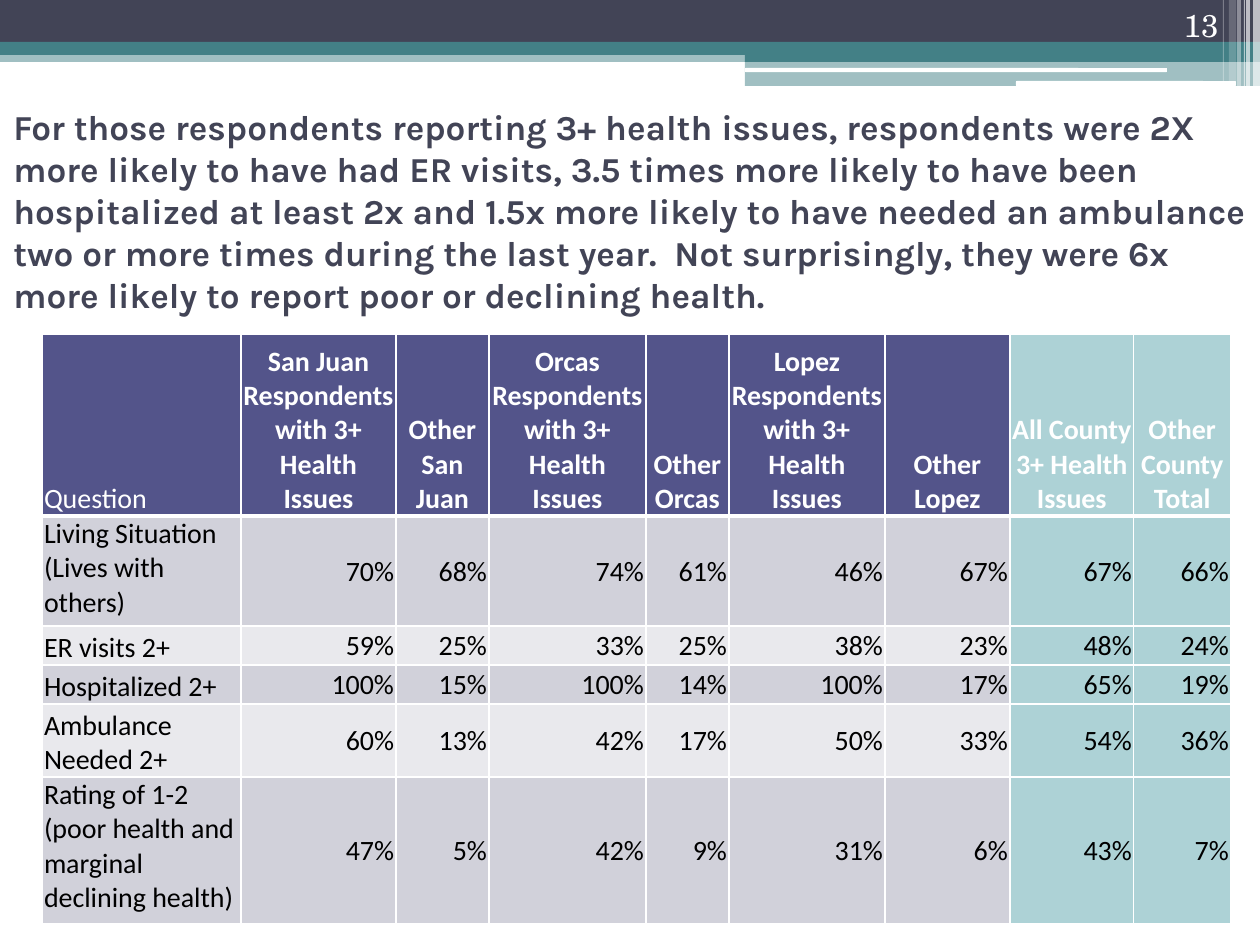
from dataclasses import dataclass

import lxml.etree
import pptx
import pptx.dml.color
import pptx.enum.shapes
import pptx.enum.text
import pptx.oxml.ns
import pptx.util

ALIGN = pptx.enum.text.PP_ALIGN
ANCHOR = pptx.enum.text.MSO_ANCHOR
SHAPE = pptx.enum.shapes.MSO_SHAPE
qn = pptx.oxml.ns.qn


@dataclass(frozen=True)
class Theme:
    white: str = "FFFFFF"
    black: str = "000000"
    navy: str = "424456"
    teal: str = "438086"
    header: str = "53548A"
    county: str = "ADD2D6"
    bands: tuple = ("D1D1DA", "E9E9ED")
    title_font: str = "Karla"
    table_font: str = "Calibri"
    number_font: str = "TeX Gyre Schola"
    title_size: int = 20
    table_size: int = 16
    number_size: int = 18
    thin_line: int = 1
    thick_line: int = 3


@dataclass(frozen=True)
class Bar:
    x: int
    y: int
    w: int
    h: int
    color: str
    opacity: int = 100
    rounded: bool = False


@dataclass(frozen=True)
class Style:
    font: str
    size: int
    color: str
    bold: bool = False
    align: ALIGN = ALIGN.LEFT
    anchor: ANCHOR = ANCHOR.MIDDLE


THEME = Theme()


def px(n: int) -> int:
    """Turn pixels (126 to the inch) into EMU."""
    return round(n * 914400 / 126)


def rgb(color: str) -> pptx.dml.color.RGBColor:
    return pptx.dml.color.RGBColor.from_string(color)


def add_bar(s, bar: Bar) -> None:
    kind = SHAPE.ROUNDED_RECTANGLE if bar.rounded else SHAPE.RECTANGLE
    sp = s.shapes.add_shape(kind, px(bar.x), px(bar.y), px(bar.w), px(bar.h))
    sp.shadow.inherit = False
    sp.line.fill.background()
    sp.fill.solid()
    sp.fill.fore_color.rgb = rgb(bar.color)
    if bar.opacity < 100:
        clr = sp.fill._xPr.find(".//" + qn("a:srgbClr"))
        lxml.etree.SubElement(clr, qn("a:alpha"), val=str(bar.opacity * 1000))


def write(tf, text: str, style: Style) -> None:
    tf.word_wrap = True
    p = tf.paragraphs[0]
    p.alignment = style.align
    r = p.add_run()
    r.text = text
    r.font.name = style.font
    r.font.size = pptx.util.Pt(style.size)
    r.font.bold = style.bold
    r.font.color.rgb = rgb(style.color)


def add_text(s, x: int, y: int, w: int, h: int, text: str, style: Style) -> None:
    tf = s.shapes.add_textbox(px(x), px(y), px(w), px(h)).text_frame
    tf.vertical_anchor = style.anchor
    write(tf, text, style)


def add_borders(cell, top: int, bottom: int) -> None:
    tc_pr = cell._tc.get_or_add_tcPr()
    widths = {"L": THEME.thin_line, "R": THEME.thin_line, "T": top, "B": bottom}
    for side, width in widths.items():
        ln = lxml.etree.SubElement(tc_pr, qn(f"a:ln{side}"), w=str(pptx.util.Pt(width)))
        fill = lxml.etree.SubElement(ln, qn("a:solidFill"))
        lxml.etree.SubElement(fill, qn("a:srgbClr"), val=THEME.white)


def cell_fill(row: int, col: int) -> str:
    if col >= COUNTY_COL:
        return THEME.county
    return THEME.header if row == 0 else THEME.bands[(row - 1) % 2]


def cell_style(row: int, col: int) -> Style:
    color = THEME.white if row == 0 else THEME.black
    if col == 0:
        align = ALIGN.LEFT
        anchor = ANCHOR.TOP if row in TOP_LABEL_ROWS else ANCHOR.BOTTOM
    elif row == 0:
        align, anchor = ALIGN.CENTER, ANCHOR.BOTTOM
    else:
        align, anchor = ALIGN.RIGHT, ANCHOR.MIDDLE
    return Style(THEME.table_font, THEME.table_size, color, row == 0 and col > 0, align, anchor)


def add_table(s, x: int, y: int) -> None:
    frame = s.shapes.add_table(len(ROWS), len(COL_WIDTHS), px(x), px(y),
                               px(sum(COL_WIDTHS)), px(sum(ROW_HEIGHTS)))
    table = frame.table
    for column, width in zip(table.columns, COL_WIDTHS):
        column.width = px(width)
    for i, (height, texts) in enumerate(zip(ROW_HEIGHTS, ROWS)):
        table.rows[i].height = px(height)
        for j, text in enumerate(texts):
            cell = table.cell(i, j)
            style = cell_style(i, j)
            cell.margin_left = cell.margin_right = px(2)
            cell.margin_top, cell.margin_bottom = px(1), 0
            cell.vertical_anchor = style.anchor
            add_borders(cell, THEME.thick_line if i == 1 else THEME.thin_line,
                        THEME.thick_line if i == 0 else THEME.thin_line)
            cell.fill.solid()
            cell.fill.fore_color.rgb = rgb(cell_fill(i, j))
            write(cell.text_frame, text, style)


# Banner bands, white rules, and the translucent stripes at the right edge
BARS = [
    Bar(0, 50, 1260, 12, THEME.teal, 50),
    Bar(0, 0, 1260, 43, THEME.navy),
    Bar(0, 42, 1260, 13, THEME.teal),
    Bar(745, 49, 515, 13, THEME.teal),
    Bar(745, 61, 515, 25, THEME.teal, 50),
    Bar(745, 68, 422, 4, THEME.white, rounded=True),
    Bar(1016, 81, 220, 5, THEME.white, rounded=True),
    Bar(1253, 0, 7, 86, THEME.white, 65),
    Bar(1246, 0, 4, 86, THEME.white, 65),
    Bar(1244, 0, 1, 86, THEME.white, 60),
    Bar(1237, 0, 4, 86, THEME.white, 40),
    Bar(1229, 0, 7, 81, THEME.white, 20),
    Bar(1223, 0, 1, 81, THEME.white, 30),
]

TITLE = (
    "For those respondents reporting 3+ health issues, respondents were 2X more likely "
    "to have had ER visits, 3.5 times more likely to have been hospitalized at least 2x "
    "and 1.5x more likely to have needed an ambulance two or more times during the last "
    "year.  Not surprisingly, they were 6x more likely to report poor or declining health."
)

# Table content and grid
COUNTY_COL = 7
TOP_LABEL_ROWS = (1, 5)
COL_WIDTHS = [199, 155, 93, 157, 83, 156, 125, 124, 97]
ROW_HEIGHTS = [182, 110, 39, 39, 73, 147]
ISSUES = "Respondents with 3+ Health Issues"
ROWS = [
    ["Question", f"San Juan {ISSUES}", "Other San Juan", f"Orcas {ISSUES}", "Other Orcas",
     f"Lopez {ISSUES}", "Other Lopez", "All County 3+ Health Issues", "Other County Total"],
    ["Living Situation (Lives with others)",
     "70%", "68%", "74%", "61%", "46%", "67%", "67%", "66%"],
    ["ER visits 2+", "59%", "25%", "33%", "25%", "38%", "23%", "48%", "24%"],
    ["Hospitalized 2+", "100%", "15%", "100%", "14%", "100%", "17%", "65%", "19%"],
    ["Ambulance Needed 2+", "60%", "13%", "42%", "17%", "50%", "33%", "54%", "36%"],
    ["Rating of 1-2 (poor health and marginal declining health)",
     "47%", "5%", "42%", "9%", "31%", "6%", "43%", "7%"],
]


def main() -> None:
    prs = pptx.Presentation()
    prs.slide_width, prs.slide_height = px(1260), px(945)
    s = prs.slides.add_slide(prs.slide_layouts[6])

    for bar in BARS:
        add_bar(s, bar)
    add_text(s, 1, 137, 1259, 147, TITLE,
             Style(THEME.title_font, THEME.title_size, THEME.navy, bold=True))
    add_table(s, 42, 334)
    add_text(s, 1126, 0, 105, 50, "13",
             Style(THEME.number_font, THEME.number_size, THEME.white,
                   align=ALIGN.RIGHT, anchor=ANCHOR.BOTTOM))

    prs.save("out.pptx")


if __name__ == "__main__":
    main()
